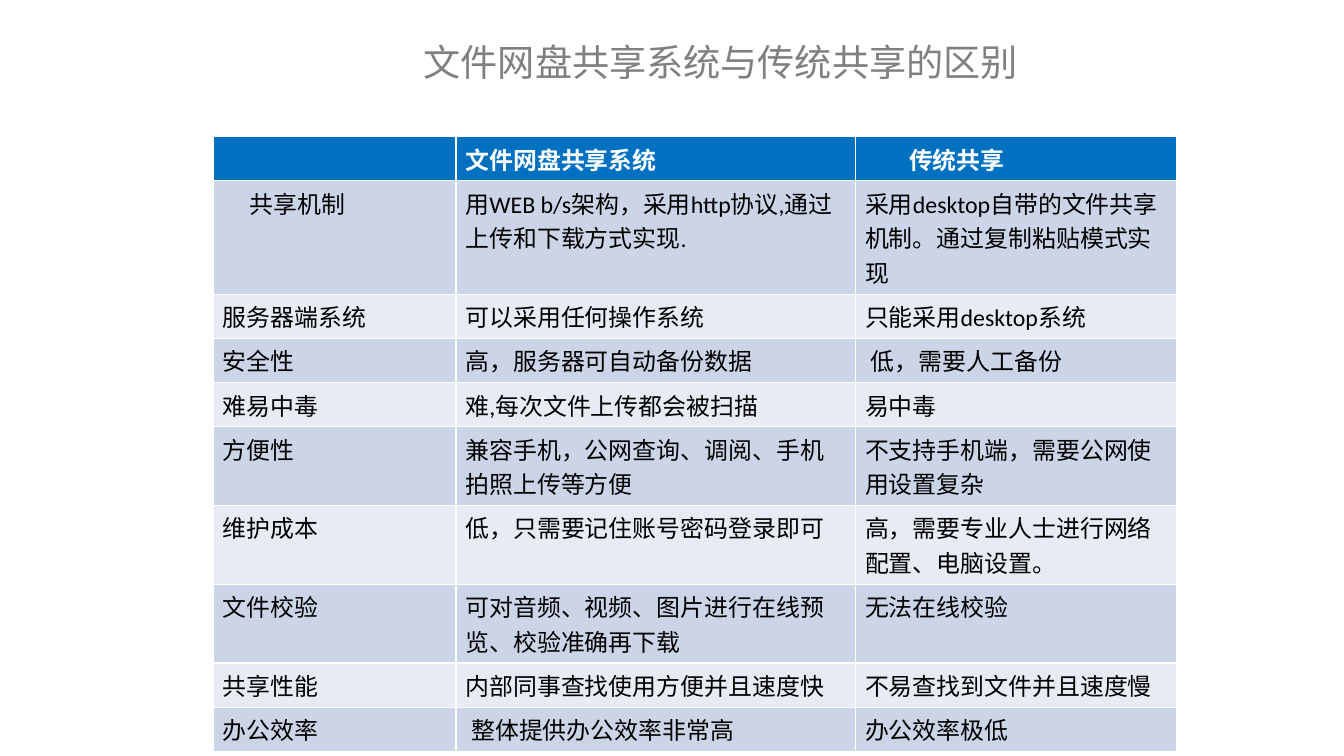
from dataclasses import dataclass

from lxml.etree import SubElement
from pptx import Presentation
from pptx.dml.color import RGBColor
from pptx.enum.text import MSO_ANCHOR, MSO_AUTO_SIZE, PP_ALIGN
from pptx.oxml.ns import qn
from pptx.util import Inches, Pt


@dataclass(frozen=True)
class Theme:
    """Colours, fonts and type sizes of the slide."""
    title_color: str = "808080"
    header_fill: str = "0070C0"
    header_color: str = "FFFFFF"
    band_fills: tuple = ("CCD5E8", "E7EBF4")
    body_color: str = "000000"
    latin_font: str = "Calibri"
    chinese_font: str = "Noto Sans CJK SC"
    title_size: int = 28
    table_size: int = 18


THEME = Theme()
TITLE = "文件网盘共享系统与传统共享的区别"
COLUMN_WIDTHS = (2.54, 4.18, 3.36)
ROW_HEIGHT = 0.41
COMPARISON = (
    ("", "文件网盘共享系统", "传统共享"),
    ("共享机制", "用WEB b/s架构，采用http协议,通过上传和下载方式实现.",
     "采用desktop自带的文件共享机制。通过复制粘贴模式实现"),
    ("服务器端系统", "可以采用任何操作系统", "只能采用desktop系统"),
    ("安全性", "高，服务器可自动备份数据", "低，需要人工备份"),
    ("难易中毒", "难,每次文件上传都会被扫描", "易中毒"),
    ("方便性", "兼容手机，公网查询、调阅、手机拍照上传等方便",
     "不支持手机端，需要公网使用设置复杂"),
    ("维护成本", "低，只需要记住账号密码登录即可",
     "高，需要专业人士进行网络配置、电脑设置。"),
    ("文件校验", "可对音频、视频、图片进行在线预览、校验准确再下载", "无法在线校验"),
    ("共享性能", "内部同事查找使用方便并且速度快", "不易查找到文件并且速度慢"),
    ("办公效率", "整体提供办公效率非常高", "办公效率极低"),
)
INDENTS = {(0, 2): 0.46, (1, 0): 0.28, (3, 2): 0.06, (9, 1): 0.06}


def write_text(frame, text, *, size, color, font, bold=False,
               align=PP_ALIGN.LEFT, indent=0, after=0):
    """Write one formatted paragraph into a text frame."""
    paragraph = frame.paragraphs[0]
    paragraph.alignment = align
    paragraph.space_before = Pt(0)
    paragraph.space_after = Pt(after)
    if indent:
        paragraph._p.get_or_add_pPr().set("marL", str(Inches(indent)))
    run = paragraph.add_run()
    run.text = text
    run.font.size = Pt(size)
    run.font.bold = bold
    run.font.color.rgb = RGBColor.from_string(color)
    run.font.name = font
    SubElement(run._r.get_or_add_rPr(), qn("a:ea")).set("typeface", THEME.chinese_font)


def place_title(slide):
    """Place and format the slide title."""
    title = slide.shapes.title
    title.left, title.top = Inches(4.11), Inches(0.41)
    title.width, title.height = Inches(6.86), Inches(0.41)
    frame = title.text_frame
    frame.word_wrap = True
    frame.auto_size = MSO_AUTO_SIZE.NONE
    frame.vertical_anchor = MSO_ANCHOR.TOP
    frame.margin_top = Inches(0)
    write_text(frame, TITLE, size=THEME.title_size, color=THEME.title_color,
               font=THEME.chinese_font, align=PP_ALIGN.CENTER, after=6)


def fill_cell(cell, text, fill, **text_format):
    """Colour a table cell and write its text."""
    cell.fill.solid()
    cell.fill.fore_color.rgb = RGBColor.from_string(fill)
    if text:
        write_text(cell.text_frame, text, size=THEME.table_size,
                   font=THEME.latin_font, **text_format)


def add_comparison(slide):
    """Add the table that compares both ways of sharing."""
    table = slide.shapes.add_table(
        len(COMPARISON), len(COLUMN_WIDTHS), Inches(2.23), Inches(1.43),
        Inches(sum(COLUMN_WIDTHS)), Inches(ROW_HEIGHT * len(COMPARISON))).table
    for column, width in zip(table.columns, COLUMN_WIDTHS):
        column.width = Inches(width)
    for row, texts in enumerate(COMPARISON):
        is_header = row == 0
        fill = THEME.header_fill if is_header else THEME.band_fills[(row - 1) % 2]
        color = THEME.header_color if is_header else THEME.body_color
        for column, text in enumerate(texts):
            fill_cell(table.cell(row, column), text, fill, color=color,
                      bold=is_header, indent=INDENTS.get((row, column), 0))


def main():
    """Build and save the presentation."""
    presentation = Presentation()
    presentation.slide_width = Inches(14.06)
    presentation.slide_height = Inches(7.91)
    slide = presentation.slides.add_slide(presentation.slide_layouts.get_by_name("Title Only"))
    place_title(slide)
    add_comparison(slide)
    presentation.save("out.pptx")


if __name__ == "__main__":
    main()
